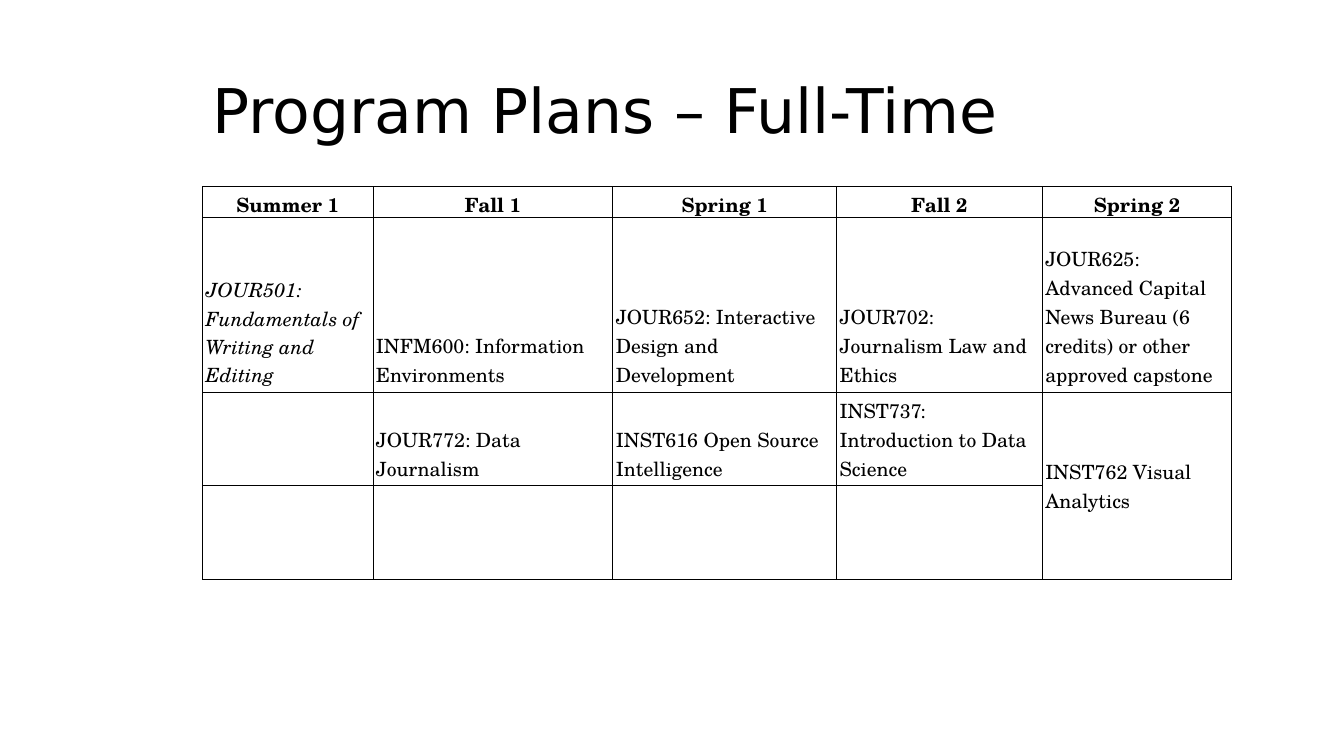
from dataclasses import dataclass

from lxml import etree
from pptx import Presentation
from pptx import util as u
from pptx.dml.color import RGBColor
from pptx.enum import text
from pptx.oxml import ns


@dataclass(frozen=True)
class Theme:
    ink: str = "000000"
    paper: str = "FFFFFF"
    title_font: str = "DejaVu Sans"
    table_font: str = "TeX Gyre Schola"
    title_size: float = 44
    table_size: float = 14
    border: float = 0.75
    inset: float = 2.16


@dataclass(frozen=True)
class Course:
    name: str = ""
    italic: bool = False
    rows: int = 1


@dataclass(frozen=True)
class Term:
    name: str
    width: float
    courses: tuple[Course, ...]


THEME = Theme()
ROW_HEIGHTS = (22.3, 124.6, 67, 67)
TERMS = (
    Term("Summer 1", 121.7, (
        Course("JOUR501: Fundamentals of Writing and Editing", italic=True),
        Course(), Course())),
    Term("Fall 1", 171.4, (
        Course("INFM600: Information Environments"),
        Course("JOUR772: Data Journalism"), Course())),
    Term("Spring 1", 159.8, (
        Course("JOUR652: Interactive Design and Development"),
        Course("INST616 Open Source Intelligence"), Course())),
    Term("Fall 2", 146.9, (
        Course("JOUR702: Journalism Law and Ethics"),
        Course("INST737: Introduction to Data Science"), Course())),
    Term("Spring 2", 135.4, (
        Course("JOUR625: Advanced Capital News Bureau (6 credits) "
               "or other approved capstone"),
        Course("INST762 Visual Analytics", rows=2))),
)


def write(tf, content: str, *, font: str, size: float, bold: bool = False,
          italic: bool = False, align=text.PP_ALIGN.LEFT,
          spacing: float = 1.0) -> None:
    p = tf.paragraphs[0]
    p.alignment = align
    p.line_spacing = spacing
    r = p.add_run()
    r.text = content
    r.font.name = font
    r.font.size = u.Pt(size)
    r.font.bold = bold
    r.font.italic = italic
    r.font.color.rgb = RGBColor.from_string(THEME.ink)


def style_cell(cell) -> None:
    tc_pr = cell._tc.get_or_add_tcPr()
    for side in ("a:lnL", "a:lnR", "a:lnT", "a:lnB"):
        ln = etree.SubElement(tc_pr, ns.qn(side), w=str(u.Pt(THEME.border)))
        fill = etree.SubElement(ln, ns.qn("a:solidFill"))
        etree.SubElement(fill, ns.qn("a:srgbClr"), val=THEME.ink)
    cell.fill.background()
    cell.margin_left = cell.margin_right = u.Pt(THEME.inset)
    cell.margin_top = cell.margin_bottom = u.Pt(THEME.inset)
    cell.vertical_anchor = text.MSO_ANCHOR.BOTTOM


def add_title(s, content: str) -> None:
    sp = s.shapes.add_textbox(u.Pt(144.7), u.Pt(28.8), u.Pt(794.2), u.Pt(104.4))
    tf = sp.text_frame
    tf.word_wrap = True
    tf.vertical_anchor = text.MSO_ANCHOR.MIDDLE
    write(tf, content, font=THEME.title_font, size=THEME.title_size, spacing=0.9)


def add_plan(s, terms: tuple[Term, ...]) -> None:
    frame = s.shapes.add_table(
        len(ROW_HEIGHTS), len(terms), u.Pt(144.7), u.Pt(133.2),
        u.Pt(sum(t.width for t in terms)), u.Pt(sum(ROW_HEIGHTS)))
    table = frame.table
    table.first_row = False
    table.horz_banding = False
    for row, height in zip(table.rows, ROW_HEIGHTS):
        row.height = u.Pt(height)
    for cell in table.iter_cells():
        style_cell(cell)
    for col, term in enumerate(terms):
        table.columns[col].width = u.Pt(term.width)
        write(table.cell(0, col).text_frame, term.name, font=THEME.table_font,
              size=THEME.table_size, bold=True, align=text.PP_ALIGN.CENTER)
        for row, course in enumerate(term.courses, start=1):
            cell = table.cell(row, col)
            if course.rows > 1:
                cell.merge(table.cell(row + course.rows - 1, col))
                cell.vertical_anchor = text.MSO_ANCHOR.MIDDLE
            if course.name:
                write(cell.text_frame, course.name, font=THEME.table_font,
                      size=THEME.table_size, italic=course.italic)


def main() -> None:
    prs = Presentation()
    prs.slide_width = u.Pt(960)
    prs.slide_height = u.Pt(540)
    s = prs.slides.add_slide(prs.slide_layouts[6])
    s.background.fill.solid()
    s.background.fill.fore_color.rgb = RGBColor.from_string(THEME.paper)
    add_title(s, "Program Plans – Full-Time")
    add_plan(s, TERMS)
    prs.save("out.pptx")


if __name__ == "__main__":
    main()
